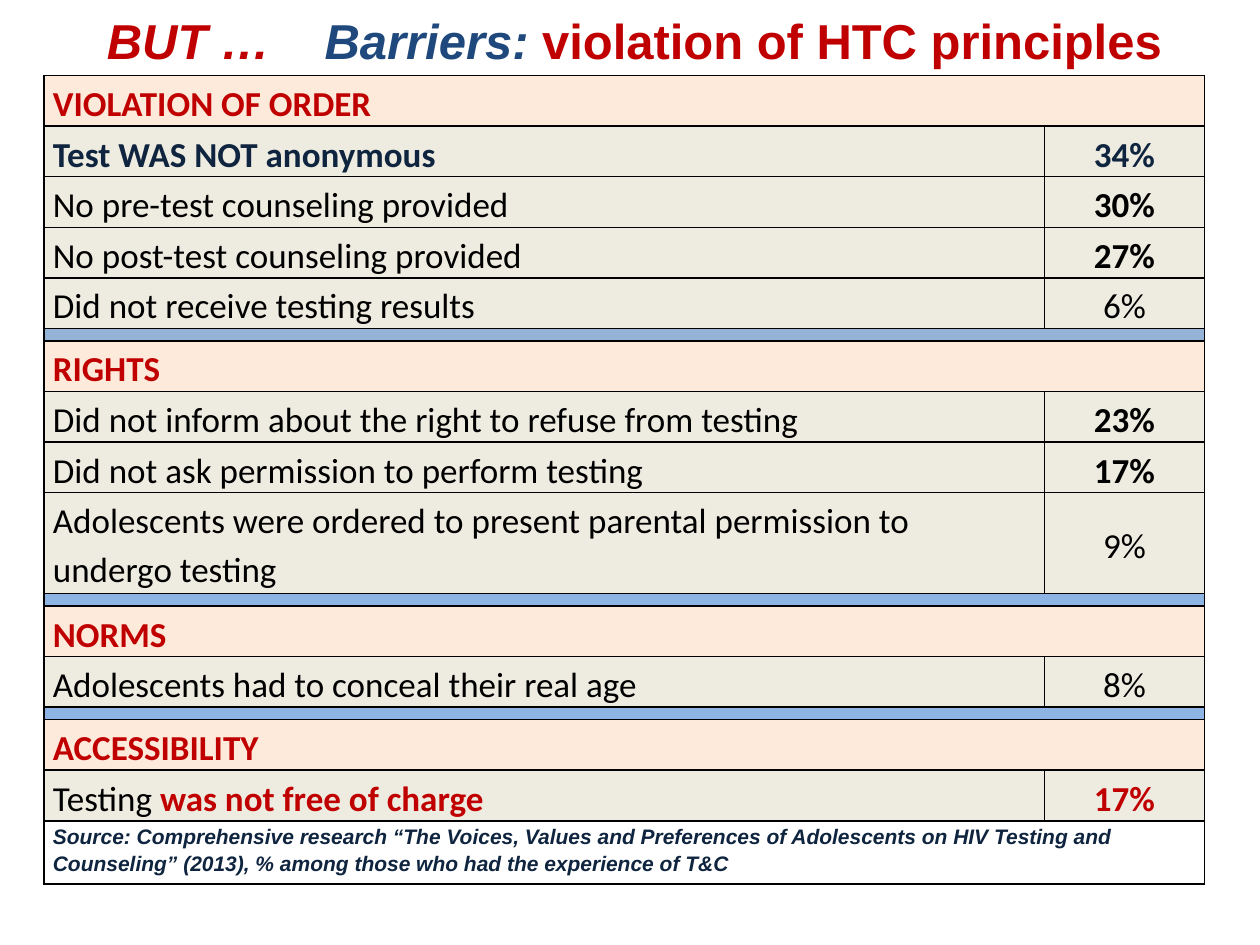
from lxml import etree
from pptx import Presentation
from pptx.dml.color import RGBColor
from pptx.enum.text import MSO_ANCHOR, MSO_AUTO_SIZE, PP_ALIGN
from pptx.oxml import parse_xml
from pptx.oxml.ns import nsdecls, qn
from pptx.util import Inches, Pt

MIDDLE, TOP = MSO_ANCHOR.MIDDLE, MSO_ANCHOR.TOP
LEFT, CENTER = PP_ALIGN.LEFT, PP_ALIGN.CENTER
NO_FIT = MSO_AUTO_SIZE.NONE

RED = RGBColor(0xC0, 0x00, 0x00)
BLUE = RGBColor(0x1F, 0x49, 0x7D)
NAVY = RGBColor(0x0F, 0x24, 0x3E)
BLACK = RGBColor(0x00, 0x00, 0x00)
PEACH = RGBColor(0xFD, 0xEA, 0xDA)
SAND = RGBColor(0xEE, 0xEC, 0xE1)
STEEL = RGBColor(0x95, 0xB3, 0xD7)
SKY = RGBColor(0x8E, 0xB4, 0xE3)

ROW, BAND, FOOT = 0.4, 0.1, 0.5  # row heights in inches
BOLD_FROM = 10  # shares from this percentage on are bold

# Section name, then rows of (plain text, strong text, percent, strong colour)
GROUPS = [
    ("VIOLATION OF ORDER", [
        ("", "Test WAS NOT anonymous", 34, NAVY),
        ("No pre-test counseling provided", "", 30, BLACK),
        ("No post-test counseling provided", "", 27, BLACK),
        ("Did not receive testing results", "", 6, BLACK)]),
    ("RIGHTS", [
        ("Did not inform about the right to refuse from testing", "", 23, BLACK),
        ("Did not ask permission to perform testing", "", 17, BLACK),
        ("Adolescents were ordered to present parental permission to "
         "undergo testing", "", 9, BLACK)]),
    ("NORMS", [("Adolescents had to conceal their real age", "", 8, BLACK)]),
    ("ACCESSIBILITY", [("Testing ", "was not free of charge", 17, RED)]),
]
BANDS = [STEEL, SKY, SKY]  # bars between the sections
SOURCE = ("Source: Comprehensive research “The Voices, Values and Preferences "
          "of Adolescents on HIV Testing and Counseling” (2013), % among those "
          "who had the experience of T&C")


def add_run(para, text, color, size=20, face="Calibri", bold=True, italic=False):
    run = para.add_run()
    run.text = text
    font = run.font
    font.name, font.size, font.bold, font.italic = face, Pt(size), bold, italic
    font.color.rgb = color
    return run


def add_title(slide, left, top, width, height):
    title = slide.shapes.title
    title.left, title.top, title.width, title.height = left, top, width, height
    frame = title.text_frame
    frame.vertical_anchor, frame.auto_size = MIDDLE, NO_FIT
    para = frame.paragraphs[0]
    para.alignment = CENTER
    look = {"size": 28, "face": "Arial"}
    add_run(para, "BUT …", RED, italic=True, **look)
    # One widely tracked space parts the two phrases
    gap = add_run(para, " ", RED, italic=True, **look)
    gap.font._element.set("spc", "2340")
    add_run(para, "Barriers: ", BLUE, italic=True, **look)
    add_run(para, "violation of HTC principles", RED, **look)


def style_cell(cell, fill=None, align=LEFT, anchor=TOP):
    """Set borders, fill and text layout; return the cell's paragraph."""
    cell.margin_left = cell.margin_right = Inches(0.07)
    cell.margin_top, cell.margin_bottom = Inches(0.01), 0
    cell.vertical_anchor = anchor
    props = cell._tc.get_or_add_tcPr()
    for side in ("lnL", "lnR", "lnT", "lnB"):
        props.append(parse_xml(
            f'<a:{side} {nsdecls("a")} w="12700"><a:solidFill>'
            f'<a:srgbClr val="{BLACK}"/></a:solidFill></a:{side}>'))
    if fill is None:
        cell.fill.background()
    else:
        cell.fill.solid()
        cell.fill.fore_color.rgb = fill
    para = cell.text_frame.paragraphs[0]
    para.alignment, para.line_spacing = align, 1.15
    return para


def span_row(table, row, fill=None):
    """Join both cells of a row and return the paragraph."""
    first, last = table.cell(row, 0), table.cell(row, 1)
    style_cell(last, fill)
    para = style_cell(first, fill)
    first.merge(last)
    return para


def fill_band(table, row, color):
    para = span_row(table, row, color)
    for cell in (table.cell(row, 0), table.cell(row, 1)):
        cell.margin_top = 0
        # A small end mark keeps the empty row thin
        mark = cell.text_frame.paragraphs[0]._p
        etree.SubElement(mark, qn("a:endParaRPr")).set("sz", "400")
    para.line_spacing = 1.0


def fill_row(table, row, plain, strong, share, color):
    para = style_cell(table.cell(row, 0), SAND)
    if plain:
        add_run(para, plain, BLACK, bold=False)
    if strong:
        add_run(para, strong, color)
    para = style_cell(table.cell(row, 1), SAND, CENTER, MIDDLE)
    add_run(para, f"{share}%", color, bold=share >= BOLD_FROM)


def add_grid(slide, left, top, width, height):
    count = sum(1 + len(rows) for _, rows in GROUPS) + len(BANDS) + 1
    table = slide.shapes.add_table(count, 2, left, top, width, height).table
    table.first_row = table.horz_banding = False
    table.columns[1].width = Inches(1.27)
    table.columns[0].width = width - Inches(1.27)
    for line in table.rows:
        line.height = Inches(ROW)

    row = 0
    for index, (name, items) in enumerate(GROUPS):
        # Bar between sections
        if index:
            table.rows[row].height = Inches(BAND)
            fill_band(table, row, BANDS[index - 1])
            row += 1
        # Section heading and its rows
        add_run(span_row(table, row, PEACH), name, RED)
        row += 1
        for item in items:
            if len(item[0]) > 60:  # wraps to two lines
                table.rows[row].height = Inches(2 * ROW)
            fill_row(table, row, *item)
            row += 1

    # Source note
    table.rows[row].height = Inches(FOOT)
    add_run(span_row(table, row), SOURCE, NAVY, 12, "Arial", italic=True)


def main():
    deck = Presentation()
    deck.slide_width, deck.slide_height = Inches(10), Inches(7.5)
    slide = deck.slides.add_slide(deck.slide_layouts[5])
    add_title(slide, Inches(0.35), Inches(0), Inches(9.37), Inches(0.63))
    add_grid(slide, Inches(0.35), Inches(0.6), Inches(9.21), Inches(6.4))
    deck.save("out.pptx")


if __name__ == "__main__":
    main()
